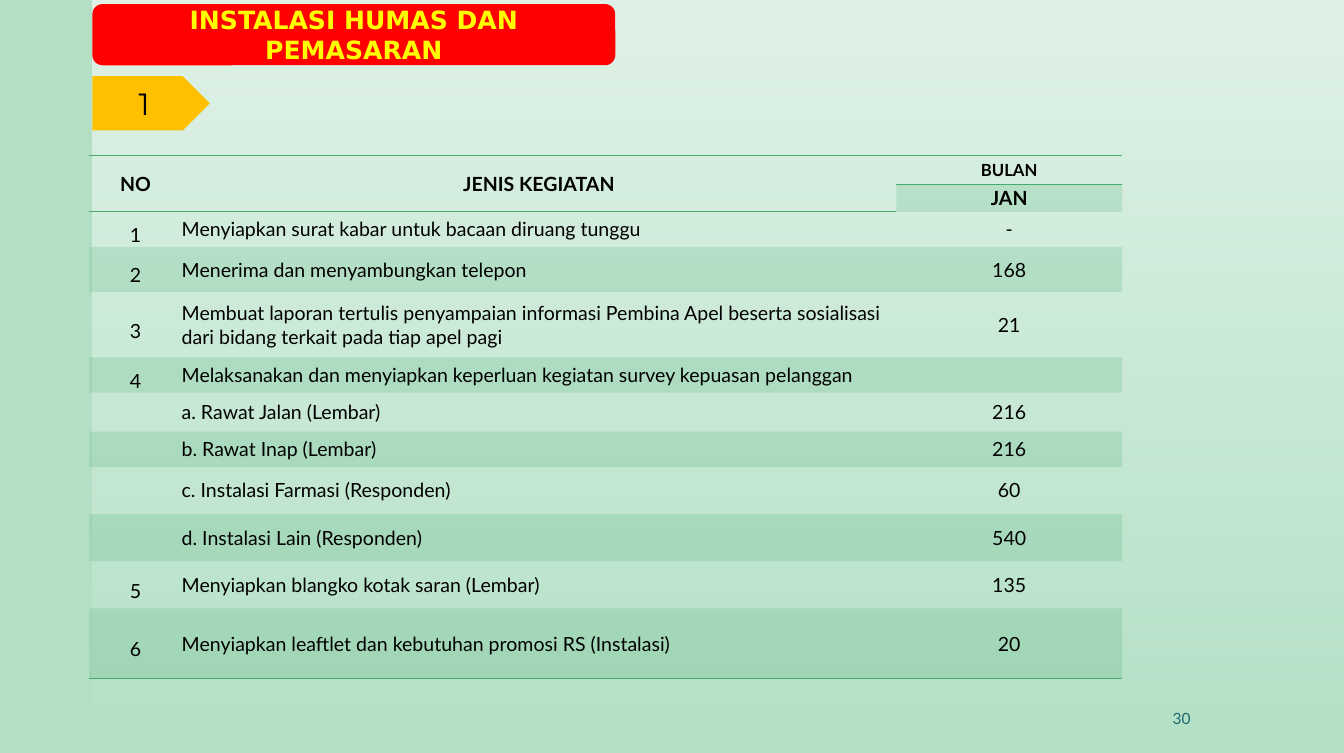
from lxml.etree import SubElement
from pptx import Presentation
from pptx.dml.color import RGBColor
from pptx.enum.shapes import MSO_SHAPE
from pptx.enum.text import MSO_ANCHOR, PP_ALIGN
from pptx.oxml import parse_xml
from pptx.oxml.ns import nsdecls, qn
from pptx.util import Pt

PX = 9144
COLORS = {
    "mint": "B3E0C5", "white": "FFFFFF", "green": "46AC6F", "red": "FF0000",
    "yellow": "FFFF00", "amber": "FFC000", "black": "000000", "teal": "1F696F",
}
NO_STYLE = "{2D5ABB26-0587-4C30-8999-92F81FD0307C}"
COLUMNS = [92, 712, 225]
ACTIVITIES = [
    (29, "NO", "JENIS KEGIATAN", "BULAN"),
    (27, "", "", "JAN"),
    (35, "1", "Menyiapkan surat kabar untuk bacaan diruang tunggu", "-"),
    (45, "2", "Menerima dan menyambungkan telepon", "168"),
    (65, "3", "Membuat laporan tertulis penyampaian informasi Pembina Apel "
              "beserta sosialisasi dari bidang terkait pada tiap apel pagi", "21"),
    (35, "4", "Melaksanakan dan menyiapkan keperluan kegiatan survey kepuasan pelanggan", ""),
    (39, "", "a. Rawat Jalan (Lembar)", "216"),
    (35, "", "b. Rawat Inap (Lembar)", "216"),
    (47, "", "c. Instalasi Farmasi (Responden)", "60"),
    (47, "", "d. Instalasi Lain (Responden)", "540"),
    (47, "5", "Menyiapkan blangko kotak saran (Lembar)", "135"),
    (70, "6", "Menyiapkan leaftlet dan kebutuhan promosi RS (Instalasi)", "20"),
]


def rgb(color):
    return RGBColor.from_string(COLORS[color])


def emu(box):
    return [length * PX for length in box]


def set_alpha(color_element, percent):
    SubElement(color_element, qn("a:alpha"), val=str(percent * 1000))


def write(frame, text, size, font, color, bold=False, align=PP_ALIGN.CENTER):
    frame.text = text
    frame.word_wrap = True
    paragraph = frame.paragraphs[0]
    paragraph.alignment = align
    for run in paragraph.runs:
        run.font.size = Pt(size)
        run.font.name = font
        run.font.bold = bold
        run.font.color.rgb = rgb(color)
    return paragraph


def add_panel(slide, kind, box):
    panel = slide.shapes.add_shape(kind, *emu(box))
    panel.shadow.inherit = False
    panel.line.fill.background()
    return panel


def add_backdrop(slide, box):
    slide.background.fill.solid()
    slide.background.fill.fore_color.rgb = rgb("mint")
    veil = add_panel(slide, MSO_SHAPE.RECTANGLE, box)
    veil.fill.gradient()
    veil.fill.gradient_angle = 270
    for stop, position in zip(veil.fill.gradient_stops, (0, 1)):
        stop.position = position
        stop.color.rgb = rgb("white")
    top, bottom = veil._element.spPr.iter(qn("a:srgbClr"))
    set_alpha(top, 60)
    set_alpha(bottom, 0)


def add_label(slide, kind, box, fill, text, *style):
    label = add_panel(slide, kind, box)
    label.fill.solid()
    label.fill.fore_color.rgb = rgb(fill)
    label.text_frame.vertical_anchor = MSO_ANCHOR.MIDDLE
    write(label.text_frame, text, *style)


def add_heading(slide, box):
    left, top, width, height = box
    add_label(slide, MSO_SHAPE.ROUNDED_RECTANGLE, (left, top, width, 61), "red",
              "INSTALASI HUMAS DAN PEMASARAN", 18, "DejaVu Sans", "yellow", True)
    add_label(slide, MSO_SHAPE.PENTAGON, (left, top + height - 54, 117, 54), "amber",
              "1", 22, "Montserrat", "black")


def add_borders(cell, sides):
    properties = cell._tc.get_or_add_tcPr()
    for index, side in enumerate(sides):
        properties.insert(index, parse_xml(
            f'<a:ln{side} {nsdecls("a")} w="12700"><a:solidFill>'
            f'<a:srgbClr val="{COLORS["green"]}"/></a:solidFill></a:ln{side}>'))


def fill_cell(cell, row, column, text):
    cell.margin_left = cell.margin_right = cell.margin_top = cell.margin_bottom = 0
    cell.vertical_anchor = MSO_ANCHOR.MIDDLE
    header = row < 2
    align = PP_ALIGN.LEFT if column == 1 and not header else PP_ALIGN.CENTER
    if text:
        paragraph = write(cell.text_frame, text, 12 if text == "BULAN" else 14,
                          "Lato", "black", header, align)
        if column == 0 and not header:
            paragraph.line_spacing = 1.5
    if row % 2 and not cell.is_spanned:
        cell.fill.solid()
        cell.fill.fore_color.rgb = rgb("green")
        set_alpha(next(cell._tc.tcPr.iter(qn("a:srgbClr"))), 20)
    else:
        cell.fill.background()
    if row == 0:
        add_borders(cell, "TB")
    elif row == len(ACTIVITIES) - 1 or (row == 1 and column < 2):
        add_borders(cell, "B")


def add_activity_table(slide, box):
    table = slide.shapes.add_table(len(ACTIVITIES), len(COLUMNS), *emu(box)).table
    table.first_row = table.horz_banding = False
    table._tbl.tblPr.find(qn("a:tableStyleId")).text = NO_STYLE
    for column, width in zip(table.columns, COLUMNS):
        column.width = width * PX
    for column in (0, 1):
        table.cell(0, column).merge(table.cell(1, column))
    table.cell(5, 1).merge(table.cell(5, 2))
    for row, (height, *texts) in enumerate(ACTIVITIES):
        table.rows[row].height = height * PX
        for column, text in enumerate(texts):
            fill_cell(table.cell(row, column), row, column, text)


def add_page_number(slide, box):
    frame = slide.shapes.add_textbox(*emu(box)).text_frame
    frame.vertical_anchor = MSO_ANCHOR.MIDDLE
    write(frame, "30", 11.1, "Lato", "teal", align=PP_ALIGN.RIGHT)


def main():
    deck = Presentation()
    deck.slide_width, deck.slide_height = emu((1339, 750))
    slide = deck.slides.add_slide(deck.slide_layouts[6])
    add_backdrop(slide, (92, 0, 1247, 750))
    add_activity_table(slide, (89, 155, sum(COLUMNS), sum(row[0] for row in ACTIVITIES)))
    add_heading(slide, (92, 4, 521, 126))
    add_page_number(slide, (884, 695, 312, 40))
    deck.save("out.pptx")


if __name__ == "__main__":
    main()
